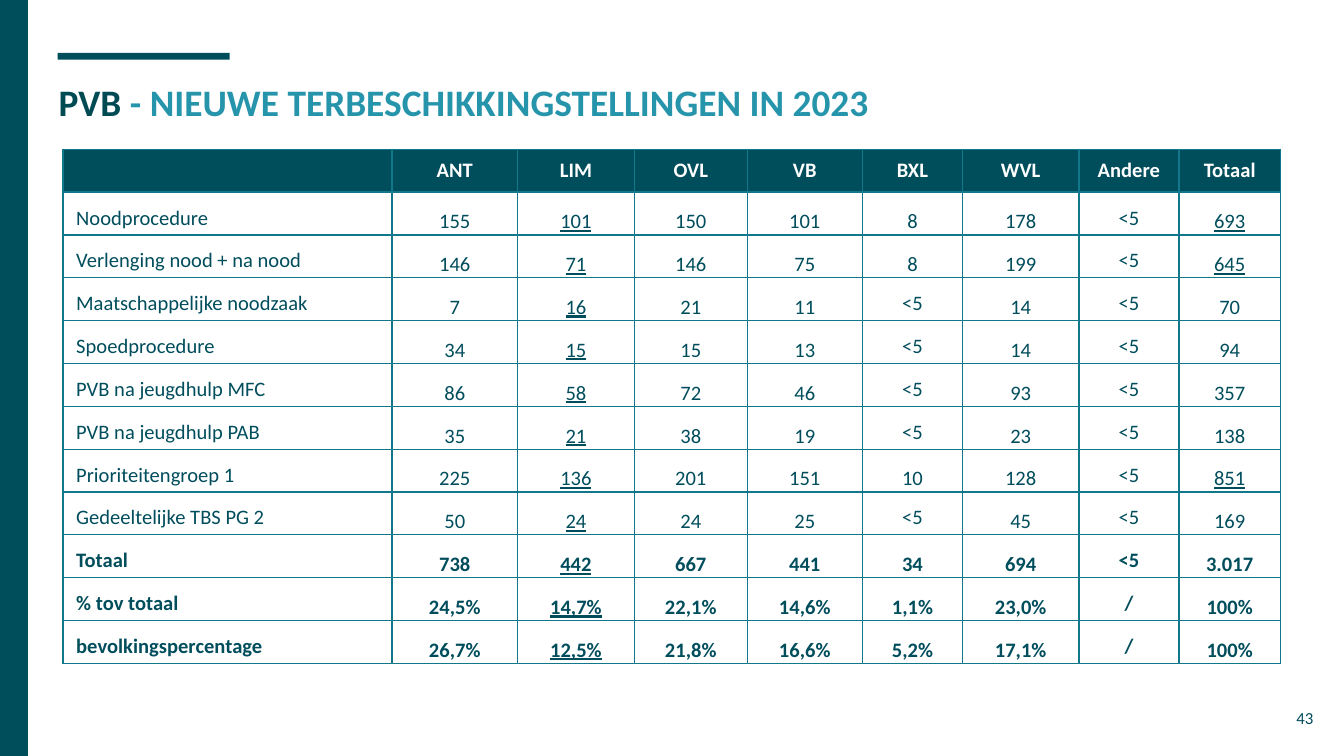
from lxml import etree
from pptx import Presentation
from pptx.dml.color import RGBColor
from pptx.enum.shapes import MSO_SHAPE
from pptx.enum.text import MSO_ANCHOR, PP_ALIGN
from pptx.oxml.ns import qn
from pptx.util import Cm, Pt

RECTANGLE = MSO_SHAPE.RECTANGLE
TOP, MIDDLE = MSO_ANCHOR.TOP, MSO_ANCHOR.MIDDLE
LEFT, CENTER, RIGHT = PP_ALIGN.LEFT, PP_ALIGN.CENTER, PP_ALIGN.RIGHT

PETROL, DARK, TEAL, GRID, WHITE = "004D5C", "004B53", "2695AB", "11788C", "FFFFFF"
INSET = 0.25

REGIONS = ["", "ANT", "LIM", "OVL", "VB", "BXL", "WVL", "Andere", "Totaal"]
COLUMN_WIDTHS = [6.22, 2.37, 2.21, 2.13, 2.18, 1.89, 2.2, 1.89, 1.92]
ROW_HEIGHT = 0.81
PROCEDURES = [
    ["Noodprocedure", "155", "101", "150", "101", "8", "178", "<5", "693"],
    ["Verlenging nood + na nood", "146", "71", "146", "75", "8", "199", "<5", "645"],
    ["Maatschappelijke noodzaak", "7", "16", "21", "11", "<5", "14", "<5", "70"],
    ["Spoedprocedure", "34", "15", "15", "13", "<5", "14", "<5", "94"],
    ["PVB na jeugdhulp MFC", "86", "58", "72", "46", "<5", "93", "<5", "357"],
    ["PVB na jeugdhulp PAB", "35", "21", "38", "19", "<5", "23", "<5", "138"],
    ["Prioriteitengroep 1", "225", "136", "201", "151", "10", "128", "<5", "851"],
    ["Gedeeltelijke TBS PG 2", "50", "24", "24", "25", "<5", "45", "<5", "169"],
]
SUMMARY = [
    ["Totaal", "738", "442", "667", "441", "34", "694", "<5", "3.017"],
    ["% tov totaal", "24,5%", "14,7%", "22,1%", "14,6%", "1,1%", "23,0%", "/", "100%"],
    ["bevolkingspercentage", "26,7%", "12,5%", "21,8%", "16,6%", "5,2%", "17,1%", "/", "100%"],
]
UNDERLINED_REGION = REGIONS.index("LIM")
UNDERLINED_TOTALS = {"693", "645", "851"}
UNCOUNTED = {"<5", "/"}


def rgb(value):
    return RGBColor.from_string(value)


class SlideBuilder:
    font_name = "Calibri"
    table_size = 11

    def __init__(self, slide):
        self.slide = slide

    def style_run(self, run, size, color, bold=False, underline=False):
        run.font.name = self.font_name
        run.font.size = Pt(size)
        run.font.bold = bold
        run.font.underline = underline
        run.font.color.rgb = rgb(color)

    def bar(self, left, top, width, height, color):
        bar = self.slide.shapes.add_shape(
            RECTANGLE, Cm(left), Cm(top), Cm(width), Cm(height))
        bar.shadow.inherit = False
        bar.fill.solid()
        bar.fill.fore_color.rgb = rgb(color)
        bar.line.fill.background()

    def text(self, left, top, width, height, parts, size, bold=False, align=LEFT):
        frame = self.slide.shapes.add_textbox(
            Cm(left), Cm(top), Cm(width), Cm(height)).text_frame
        frame.word_wrap = True
        frame.vertical_anchor = TOP
        frame.margin_left = frame.margin_right = Cm(INSET)
        frame.margin_top = frame.margin_bottom = Cm(INSET)
        paragraph = frame.paragraphs[0]
        paragraph.alignment = align
        for wording, color in parts:
            run = paragraph.add_run()
            run.text = wording
            self.style_run(run, size, color, bold)

    def borders(self, cell, color, width):
        properties = cell._tc.get_or_add_tcPr()
        for side in ("a:lnL", "a:lnR", "a:lnT", "a:lnB"):
            line = etree.SubElement(properties, qn(side), w=str(Pt(width)))
            fill = etree.SubElement(line, qn("a:solidFill"))
            etree.SubElement(fill, qn("a:srgbClr"), val=color)

    def cell(self, cell, wording, header, bold, underline, align):
        self.borders(cell, GRID, 0.75)
        if header:
            cell.fill.solid()
            cell.fill.fore_color.rgb = rgb(PETROL)
        else:
            cell.fill.background()
        cell.margin_left = cell.margin_right = Cm(INSET)
        cell.margin_top = Cm(0 if header else INSET)
        cell.margin_bottom = Cm(0)
        cell.vertical_anchor = MIDDLE if header else TOP
        cell.text_frame.text = wording
        paragraph = cell.text_frame.paragraphs[0]
        paragraph.alignment = align
        if align == CENTER and not header and wording not in UNCOUNTED:
            paragraph.line_spacing = 1.15
        for run in paragraph.runs:
            self.style_run(run, self.table_size, WHITE if header else PETROL,
                           bold, underline)

    def table(self, left, top, header, body, summary):
        rows = [header] + body + summary
        table = self.slide.shapes.add_table(
            len(rows), len(header), Cm(left), Cm(top),
            Cm(sum(COLUMN_WIDTHS)), Cm(ROW_HEIGHT * len(rows))).table
        for column, width in zip(table.columns, COLUMN_WIDTHS):
            column.width = Cm(width)
        for r, values in enumerate(rows):
            table.rows[r].height = Cm(ROW_HEIGHT)
            is_header = r == 0
            bold = is_header or r > len(body)
            for c, wording in enumerate(values):
                underline = not is_header and (
                    c == UNDERLINED_REGION or wording in UNDERLINED_TOTALS)
                self.cell(table.cell(r, c), wording, is_header, bold, underline,
                          CENTER if c else LEFT)


def main():
    presentation = Presentation()
    presentation.slide_width = Cm(25.4)
    presentation.slide_height = Cm(14.29)
    builder = SlideBuilder(presentation.slides.add_slide(presentation.slide_layouts[6]))

    builder.bar(1.09, 1.0, 3.25, 0.13, PETROL)
    builder.bar(0, 0, 0.53, 14.29, PETROL)
    builder.text(0.86, 1.25, 23.67, 1.6,
                 [("PVB ", DARK), ("- NIEUWE TERBESCHIKKINGSTELLINGEN IN 2023", TEAL)],
                 20, bold=True)
    builder.text(23.55, 13.18, 1.52, 1.09, [("43", PETROL)], 9, align=RIGHT)
    builder.table(1.19, 2.82, REGIONS, PROCEDURES, SUMMARY)

    presentation.save("out.pptx")


if __name__ == "__main__":
    main()
